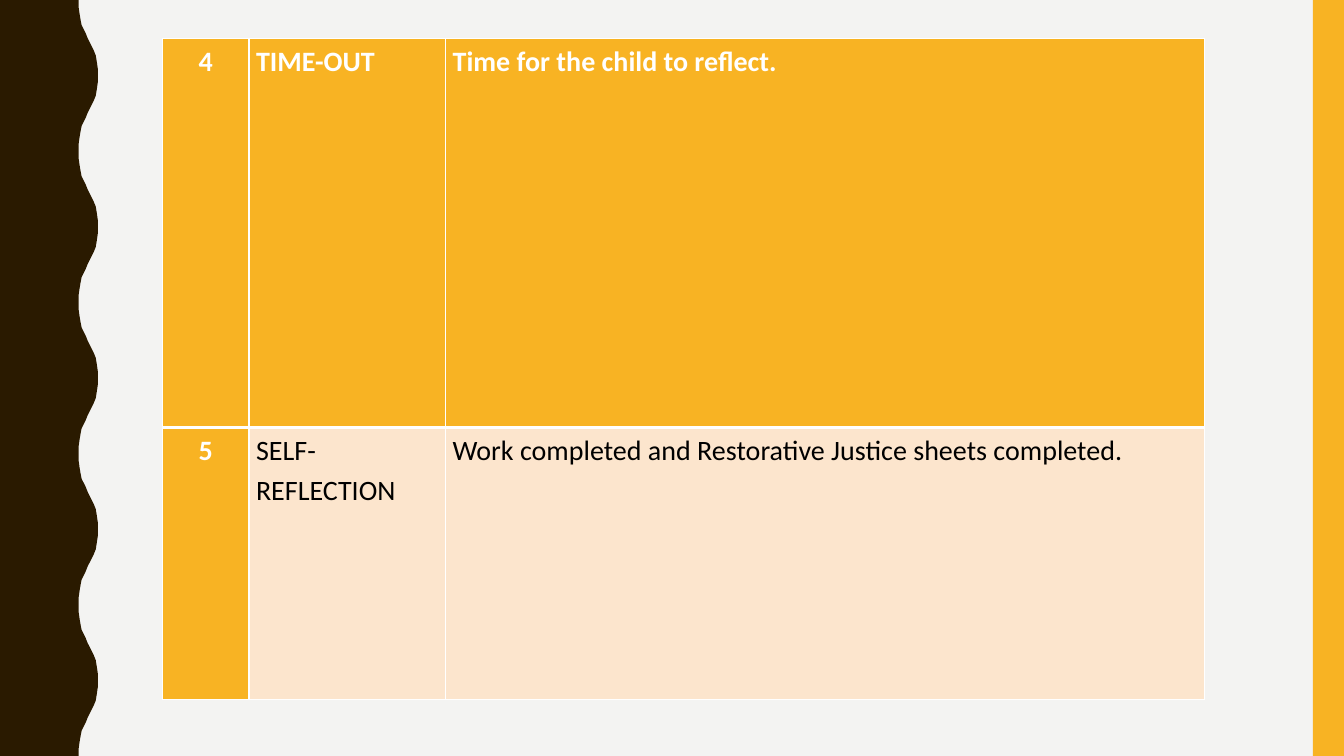
"""Build a behaviour-steps slide: a two-row table between a wavy edge and a side bar."""
from dataclasses import dataclass

import lxml.etree
import pptx
import pptx.dml.color
import pptx.enum.shapes
import pptx.enum.text
import pptx.oxml.ns
import pptx.presentation
import pptx.shapes.base
import pptx.slide
import pptx.table
import pptx.util

PX = 9144
SLIDE_WIDTH, SLIDE_HEIGHT = 1333, 750

PAPER = pptx.dml.color.RGBColor(0xF3, 0xF3, 0xF2)
BROWN = pptx.dml.color.RGBColor(0x2A, 0x1A, 0x00)
AMBER = pptx.dml.color.RGBColor(0xF8, 0xB3, 0x23)
PEACH = pptx.dml.color.RGBColor(0xFC, 0xE5, 0xCD)
WHITE = pptx.dml.color.RGBColor(0xFF, 0xFF, 0xFF)
BLACK = pptx.dml.color.RGBColor(0x00, 0x00, 0x00)

WAVE_PERIOD = 150
HALF_WAVE = [
    (78, 0), (78, 7), (79, 14), (80, 20), (81, 25), (83, 29), (85, 33), (87, 38),
    (89, 42), (91, 46), (93, 50), (95, 55), (96, 61), (97, 68), (97, 75),
]

COLUMN_WIDTHS = [86, 195, 753]
THIN, THICK = 1, 3


@dataclass(frozen=True)
class CellStyle:
    fill: pptx.dml.color.RGBColor
    ink: pptx.dml.color.RGBColor
    bold: bool


@dataclass(frozen=True)
class Step:
    number: str
    name: str
    detail: str
    height: int
    style: CellStyle
    top_border: int
    bottom_border: int


STRONG = CellStyle(AMBER, WHITE, True)
PLAIN = CellStyle(PEACH, BLACK, False)
STEPS = [
    Step("4", "TIME-OUT", "Time for the child to reflect.", 386, STRONG, THIN, THICK),
    Step("5", "SELF-REFLECTION", "Work completed and Restorative Justice sheets completed.",
         270, PLAIN, THICK, THIN),
]


def px(length: int) -> pptx.util.Emu:
    """Convert whole pixels to EMU."""
    return pptx.util.Emu(length * PX)


def paint(shape: pptx.shapes.base.BaseShape, color: pptx.dml.color.RGBColor) -> None:
    """Give a shape a flat fill with no outline or shadow."""
    shape.fill.solid()
    shape.fill.fore_color.rgb = color
    shape.line.fill.background()
    shape.shadow.inherit = False


def draw_wavy_edge(slide: pptx.slide.Slide) -> None:
    """Draw the brown left edge by repeating one mirrored half wave."""
    wave = HALF_WAVE + [(x, WAVE_PERIOD - y) for x, y in reversed(HALF_WAVE[:-1])]
    outline = [
        (x, y + top)
        for top in range(0, SLIDE_HEIGHT, WAVE_PERIOD)
        for x, y in wave
    ]
    builder = slide.shapes.build_freeform(0, 0, scale=PX)
    builder.add_line_segments(outline + [(0, SLIDE_HEIGHT)], close=True)
    paint(builder.convert_to_shape(), BROWN)


def draw_side_bar(slide: pptx.slide.Slide) -> None:
    """Draw the amber bar on the right."""
    bar = slide.shapes.add_shape(
        pptx.enum.shapes.MSO_SHAPE.RECTANGLE, px(1302), 0, px(31), px(SLIDE_HEIGHT))
    paint(bar, AMBER)


def add_borders(cell: pptx.table._Cell, top: int, bottom: int) -> None:
    """Add white borders to a cell that has no fill yet."""
    properties = cell._tc.get_or_add_tcPr()
    for side, points in (("L", THIN), ("R", THIN), ("T", top), ("B", bottom)):
        border = lxml.etree.SubElement(
            properties, pptx.oxml.ns.qn(f"a:ln{side}"), w=str(pptx.util.Pt(points)))
        solid = lxml.etree.SubElement(border, pptx.oxml.ns.qn("a:solidFill"))
        lxml.etree.SubElement(solid, pptx.oxml.ns.qn("a:srgbClr"), val=str(WHITE))


def write_cell(cell: pptx.table._Cell, text: str, style: CellStyle, step: Step,
               alignment: pptx.enum.text.PP_ALIGN) -> None:
    """Fill one cell with styled text."""
    add_borders(cell, step.top_border, step.bottom_border)
    cell.fill.solid()
    cell.fill.fore_color.rgb = style.fill
    cell.margin_left = cell.margin_right = px(7)
    cell.margin_top = cell.margin_bottom = 0
    cell.text = text
    paragraph = cell.text_frame.paragraphs[0]
    paragraph.alignment = alignment
    paragraph.line_spacing = 1.18
    paragraph.space_after = pptx.util.Pt(6)
    paragraph.font.name = "Calibri"
    paragraph.font.size = pptx.util.Pt(20)
    paragraph.font.bold = style.bold
    paragraph.font.color.rgb = style.ink


def draw_steps(slide: pptx.slide.Slide) -> None:
    """Draw the table of steps."""
    table = slide.shapes.add_table(
        len(STEPS), len(COLUMN_WIDTHS), px(161), px(38),
        px(sum(COLUMN_WIDTHS)), px(sum(step.height for step in STEPS))).table
    table.first_row = table.horz_banding = False
    for column, width in zip(table.columns, COLUMN_WIDTHS):
        column.width = px(width)
    align = pptx.enum.text.PP_ALIGN
    for row, step in zip(table.rows, STEPS):
        row.height = px(step.height)
        number, name, detail = row.cells
        write_cell(number, step.number, STRONG, step, align.CENTER)
        write_cell(name, step.name, step.style, step, align.LEFT)
        write_cell(detail, step.detail, step.style, step, align.LEFT)


def main() -> None:
    """Build and save the presentation."""
    deck: pptx.presentation.Presentation = pptx.Presentation()
    deck.slide_width, deck.slide_height = px(SLIDE_WIDTH), px(SLIDE_HEIGHT)
    slide = deck.slides.add_slide(deck.slide_layouts[6])
    slide.background.fill.solid()
    slide.background.fill.fore_color.rgb = PAPER
    draw_wavy_edge(slide)
    draw_side_bar(slide)
    draw_steps(slide)
    deck.save("out.pptx")


if __name__ == "__main__":
    main()
